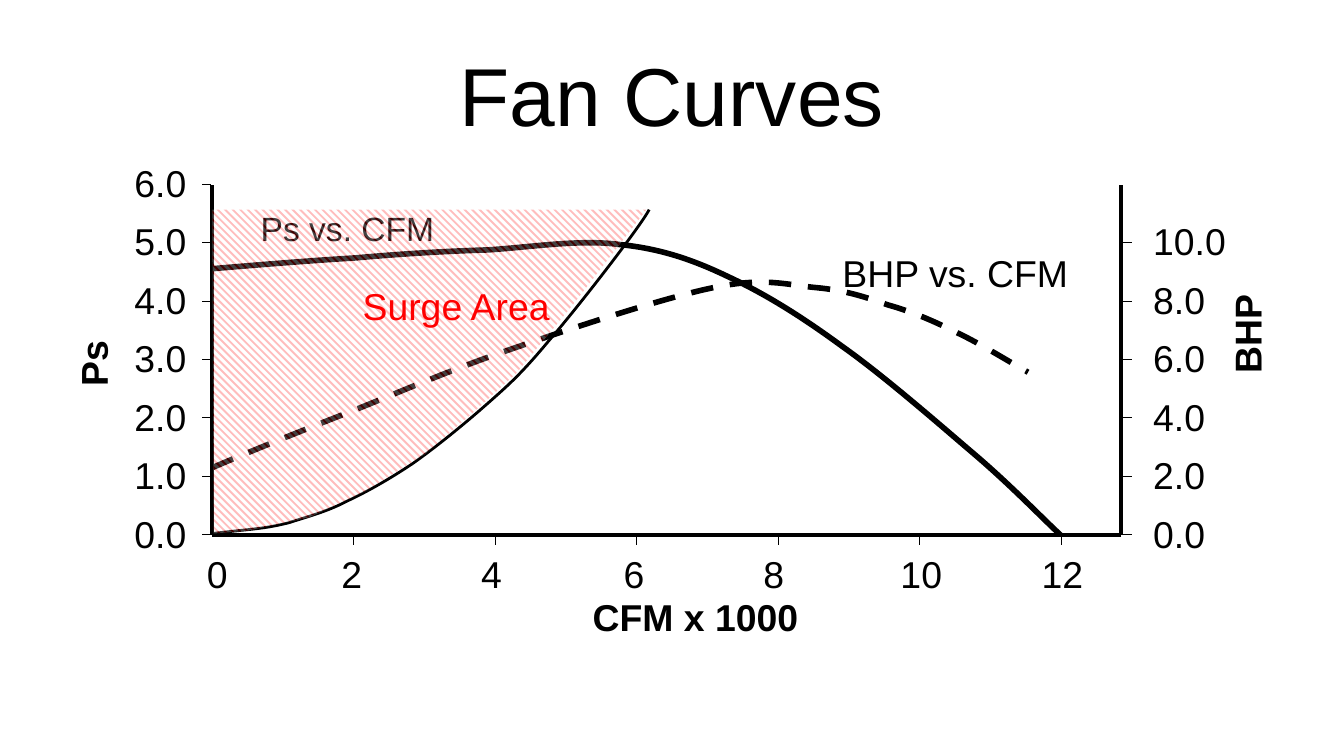
from lxml import etree
from pptx import Presentation
from pptx.dml.color import RGBColor
from pptx.enum.dml import MSO_LINE, MSO_PATTERN
from pptx.enum.shapes import MSO_CONNECTOR
from pptx.enum.text import MSO_ANCHOR, MSO_AUTO_SIZE, PP_ALIGN
from pptx.oxml.ns import qn
from pptx.util import Inches, Pt

LEFT, CENTER, RIGHT = PP_ALIGN.LEFT, PP_ALIGN.CENTER, PP_ALIGN.RIGHT
MIDDLE = MSO_ANCHOR.MIDDLE
FIT = MSO_AUTO_SIZE.SHAPE_TO_FIT_TEXT
STRAIGHT = MSO_CONNECTOR.STRAIGHT
DASH = MSO_LINE.DASH
HATCH = MSO_PATTERN.WIDE_DOWNWARD_DIAGONAL

BLACK, RED, WHITE = "000000", "FF0000", "FFFFFF"

# Plot geometry in inches
AXIS_LEFT, AXIS_RIGHT, AXIS_TOP, AXIS_BOTTOM = 1.58, 8.34, 1.38, 3.98
X_STEP, Y_STEP = 1.053, 0.435
LABEL_HEIGHT = 0.34
X_LABEL_LEFTS = [1.54, 2.54, 3.58, 4.64, 5.68, 6.7, 7.75]

# Each curve is a start point followed by three Bézier points per segment
PRESSURE_CURVE = [
    (1.58, 2), (1.94, 1.97), (2.3, 1.94), (2.64, 1.92),
    (2.98, 1.89), (3.3, 1.87), (3.63, 1.86),
    (3.95, 1.84), (4.31, 1.78), (4.61, 1.82),
    (4.91, 1.85), (5.15, 1.93), (5.42, 2.06),
    (5.7, 2.19), (5.97, 2.36), (6.27, 2.58),
    (6.58, 2.8), (6.98, 3.15), (7.25, 3.38),
    (7.52, 3.61), (7.76, 3.86), (7.89, 3.98),
]
POWER_CURVE = [
    (1.58, 3.48), (1.74, 3.41), (2.18, 3.23), (2.54, 3.09),
    (2.9, 2.95), (3.28, 2.78), (3.74, 2.62),
    (4.2, 2.46), (4.92, 2.22), (5.31, 2.14),
    (5.69, 2.06), (5.85, 2.12), (6.07, 2.14),
    (6.29, 2.16), (6.44, 2.21), (6.61, 2.27),
    (6.79, 2.32), (6.95, 2.39), (7.13, 2.48),
    (7.3, 2.56), (7.54, 2.71), (7.65, 2.77),
]
SURGE_CURVE = [
    (1.58, 3.97), (1.67, 3.96), (1.76, 3.95), (1.86, 3.94),
    (1.95, 3.93), (2.03, 3.92), (2.15, 3.89),
    (2.27, 3.85), (2.43, 3.81), (2.58, 3.73),
    (2.73, 3.66), (2.89, 3.57), (3.07, 3.45),
    (3.24, 3.33), (3.45, 3.16), (3.62, 3.01),
    (3.79, 2.86), (3.88, 2.78), (4.08, 2.54),
    (4.29, 2.3), (4.77, 1.68), (4.83, 1.56),
]
SURGE_AREA = [
    (1.59, 3.97), (1.84, 3.95), (1.93, 3.93), (2.3, 3.85), (2.71, 3.66),
    (3.16, 3.38), (3.51, 3.08), (3.84, 2.78), (4.27, 2.26), (4.81, 1.56),
    (1.58, 1.56),
]


def color(value):
    return RGBColor.from_string(value)


class FanChart:
    font = "Arial"
    label_size = 20

    def __init__(self, slide):
        self.slide = slide

    def text(self, text, left, top, width, height, size=label_size, fill=BLACK,
             bold=False, align=LEFT):
        shape = self.slide.shapes.add_textbox(
            Inches(left), Inches(top), Inches(width), Inches(height))
        shape.text_frame.word_wrap = True
        paragraph = shape.text_frame.paragraphs[0]
        paragraph.text = text
        paragraph.alignment = align
        font = paragraph.font
        font.name, font.size, font.bold = self.font, Pt(size), bold
        font.color.rgb = color(fill)
        return shape

    def label(self, text, left, top, width, bold=False, rotation=0):
        shape = self.text(text, left, top, width, LABEL_HEIGHT, bold=bold)
        shape.rotation = rotation
        frame = shape.text_frame
        frame.margin_left = frame.margin_right = 0
        frame.margin_top = frame.margin_bottom = 0
        frame.word_wrap = False
        frame.auto_size = FIT

    def line(self, x1, y1, x2, y2, width=0):
        connector = self.slide.shapes.add_connector(
            STRAIGHT, Inches(x1), Inches(y1), Inches(x2), Inches(y2))
        connector.line.color.rgb = color(BLACK)
        # A hairline needs its zero width written out
        connector.get_or_add_ln().set("w", str(int(Pt(width))))
        etree.SubElement(connector._element.spPr, qn("a:effectLst"))

    def outline(self, points, close):
        start, *others = [(Inches(x), Inches(y)) for x, y in points]
        builder = self.slide.shapes.build_freeform(*start)
        builder.add_line_segments(others, close=close)
        shape = builder.convert_to_shape()
        shape.shadow.inherit = False
        return shape

    def curve(self, points, width, dash=None):
        shape = self.outline(points, close=False)
        shape.fill.background()
        shape.line.color.rgb = color(BLACK)
        shape.line.width = Pt(width)
        if dash:
            shape.line.dash_style = dash
        # Join every three straight segments into one Bézier segment
        geometry = shape._element.find(".//" + qn("a:path"))
        segments = geometry.findall(qn("a:lnTo"))
        for first, second, third in zip(*[iter(segments)] * 3):
            bezier = etree.Element(qn("a:cubicBezTo"))
            geometry.replace(first, bezier)
            for segment in (first, second, third):
                bezier.append(segment[0])
            geometry.remove(second)
            geometry.remove(third)

    def hatched_area(self, points, opacity):
        shape = self.outline(points, close=True)
        shape.line.fill.background()
        shape.fill.patterned()
        shape.fill.pattern = HATCH
        shape.fill.fore_color.rgb = color(RED)
        shape.fill.back_color.rgb = color(WHITE)
        pattern = shape._element.spPr.find(qn("a:pattFill"))
        for value in pattern.iter(qn("a:srgbClr")):
            etree.SubElement(value, qn("a:alpha"), val=str(opacity * 1000))

    def y_axis(self, x, tick_x, label_x, values):
        self.line(x, AXIS_TOP, x, AXIS_BOTTOM, 2.25)
        for index, value in enumerate(values):
            y = AXIS_BOTTOM - index * Y_STEP
            self.line(tick_x, y, tick_x + 0.06, y)
            self.label(f"{value:.1f}", label_x, y - 0.18, 0.55 if value >= 10 else 0.39)

    def x_axis(self):
        self.line(AXIS_LEFT, AXIS_BOTTOM, AXIS_RIGHT, AXIS_BOTTOM, 2.25)
        for index, left in enumerate(X_LABEL_LEFTS):
            value = 2 * index
            if index:
                x = AXIS_LEFT + index * X_STEP
                self.line(x, AXIS_BOTTOM + 0.07, x, AXIS_BOTTOM)
            self.label(str(value), left, 4.1, 0.32 if value >= 10 else 0.16)


def main():
    presentation = Presentation()
    presentation.slide_width = Inches(10)
    presentation.slide_height = Inches(10) * 9 // 16
    slide = presentation.slides.add_slide(presentation.slide_layouts[6])
    chart = FanChart(slide)

    # Title
    title = chart.text("Fan Curves", 0.5, 0.23, 9, 0.94, size=44, align=CENTER)
    title.text_frame.vertical_anchor = MIDDLE

    # Axes with ticks, values and names
    chart.y_axis(AXIS_LEFT, 1.51, 1, range(7))
    chart.y_axis(AXIS_RIGHT, 8.36, 8.58, range(0, 11, 2))
    chart.x_axis()
    chart.label("CFM x 1000", 4.41, 4.42, 1.56, bold=True)
    chart.label("Ps", 0.52, 2.53, 0.35, bold=True, rotation=270)
    chart.label("BHP", 8.98, 2.31, 0.6, bold=True, rotation=270)

    # Fan curves
    chart.text("Ps vs. CFM", 1.83, 1.5, 1.5, 0.4, size=18, align=RIGHT)
    chart.curve(PRESSURE_CURVE, 3)
    chart.curve(POWER_CURVE, 3, DASH)
    chart.text("BHP vs. CFM", 6.17, 1.81, 2.08, 0.44)

    # Surge area
    chart.curve(SURGE_CURVE, 1.5)
    chart.hatched_area(SURGE_AREA, opacity=25)
    chart.text("Surge Area", 2.6, 2.06, 1.67, 0.44, fill=RED)

    presentation.save("out.pptx")


if __name__ == "__main__":
    main()
